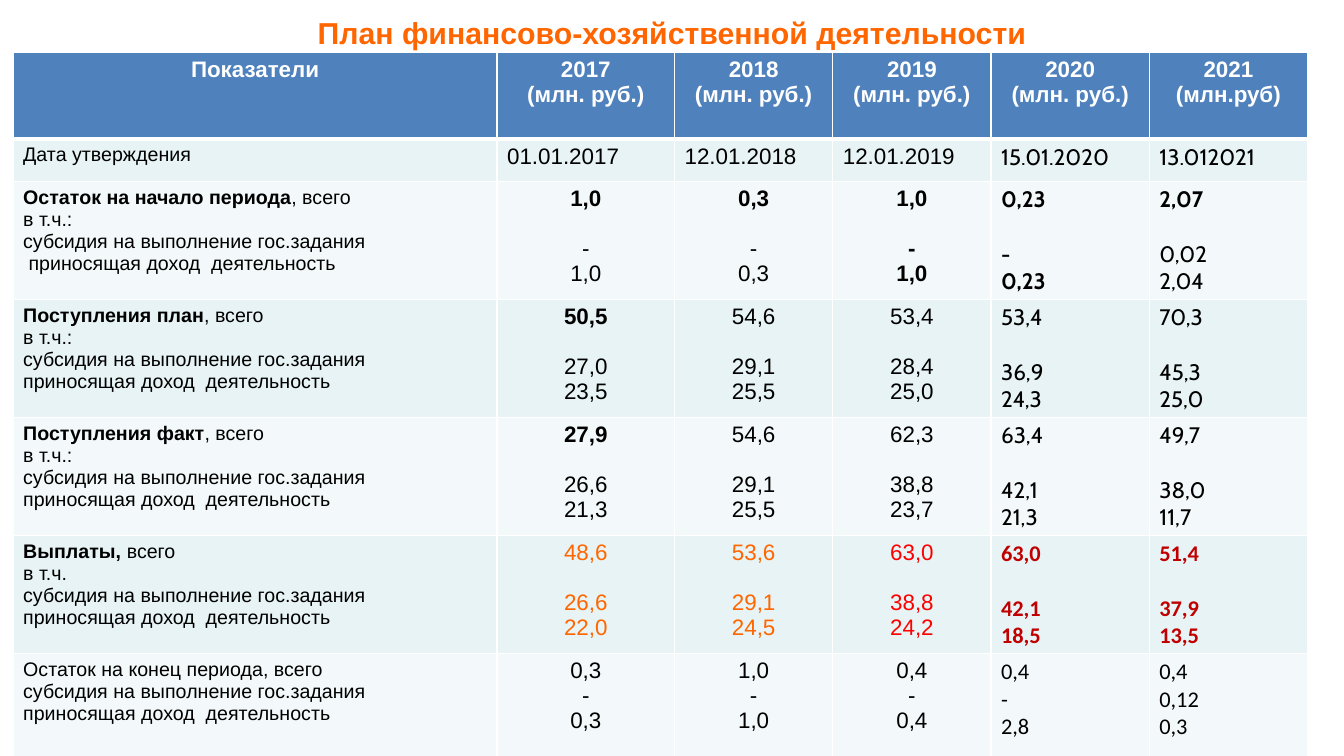
import lxml.etree
import pptx
import pptx.dml.color
import pptx.enum.text
import pptx.oxml.ns
import pptx.util

PX = 9144  # EMU per px, 100 px to the inch
ALIGN = pptx.enum.text.PP_ALIGN


class Theme:
    ARIAL, CABIN, CALIBRI = "Arial", "Cabin", "Calibri"
    TITLE_SIZE, LABEL_SIZE, VALUE_SIZE = 21.6, 14, 16
    BLANK_LINE = {ARIAL: 18, CABIN: 19.5, CALIBRI: 19.5}  # points
    ORANGE, RED, DARK_RED = "FF6600", "FF0000", "C00000"
    BLACK, WHITE, HEADER = "000000", "FFFFFF", "4F81BD"
    BANDS = ("E7F3F4", "F3F9FA")


COLUMN_WIDTHS = [480, 176, 157, 157, 157, 157]
ROW_HEIGHTS = [86, 42] + [111] * 5
TABLE_WIDTH, TABLE_HEIGHT = sum(COLUMN_WIDTHS), sum(ROW_HEIGHTS)

HEADINGS = [["Показатели"]] + [
    [year, unit] for year, unit in (
        ("2017", "(млн. руб.)"), ("2018", "(млн. руб.)"), ("2019", "(млн. руб.)"),
        ("2020", "(млн. руб.)"), ("2021", "(млн.руб)"))]
SUBSIDY = "субсидия на выполнение гос.задания"
INCOME = "приносящая доход  деятельность"

PLAIN = [Theme.BLACK] * 5
PAYOUT = [Theme.ORANGE] * 2 + [Theme.RED] + [Theme.DARK_RED] * 2
WITH_CABIN = [Theme.ARIAL] * 3 + [Theme.CABIN] * 2
WITH_CALIBRI = [Theme.ARIAL] * 3 + [Theme.CALIBRI] * 2

# Label lines, values by year, fonts, colours; text before "|" is bold
ROWS = [
    (["Дата утверждения"],
     ["01.01.2017", "12.01.2018", "12.01.2019", "15.01.2020", "13.012021"],
     WITH_CABIN, PLAIN),
    (["Остаток на начало периода|, всего", "в т.ч.:", SUBSIDY, " " + INCOME],
     ["1,0| - 1,0", "0,3| - 0,3", "1,0| -| 1,0|", "0,23| -| 0,23|", "2,07| 0,02 2,04"],
     WITH_CABIN, PLAIN),
    (["Поступления план|, всего", "в т.ч.:", SUBSIDY, INCOME],
     ["50,5| 27,0 23,5", "54,6 29,1 25,5", "53,4 28,4 25,0", "53,4 36,9 24,3", "70,3 45,3 25,0"],
     WITH_CABIN, PLAIN),
    (["Поступления факт|, всего", "в т.ч.:", SUBSIDY, INCOME],
     ["27,9| 26,6 21,3", "54,6 29,1 25,5", "62,3 38,8 23,7", "63,4 42,1 21,3", "49,7 38,0 11,7"],
     WITH_CABIN, PLAIN),
    (["Выплаты, |всего", "в т.ч.", SUBSIDY, INCOME],
     ["48,6 26,6 22,0", "53,6 29,1 24,5", "63,0 38,8 24,2", "63,0| 42,1| 18,5|", "51,4| 37,9| 13,5|"],
     WITH_CALIBRI, PAYOUT),
    (["Остаток на конец периода, всего", SUBSIDY, INCOME],
     ["0,3 - 0,3", "1,0 - 1,0", "0,4 - 0,4", "0,4 - 2,8", "0,4 0,12 0,3"],
     WITH_CALIBRI, PLAIN),
]


def rgb(color):
    return pptx.dml.color.RGBColor.from_string(color)


def write_lines(tf, lines, size, color, font=Theme.ARIAL, align=ALIGN.LEFT, gap=0):
    """One paragraph per line; gap is the space before the second line."""
    for i, line in enumerate(lines):
        p = tf.add_paragraph() if i else tf.paragraphs[0]
        p.alignment = align
        if i == 1 and gap:
            p.space_before = pptx.util.Pt(gap)
        p.font.name = font
        p.font.size = pptx.util.Pt(size)
        p.font.color.rgb = rgb(color)
        bold, mark, rest = line.rpartition("|")
        p.font.bold = bool(mark) and not rest
        for text in filter(None, (bold, rest)):
            r = p.add_run()
            r.text = text
            if bold and rest:
                r.font.bold = text == bold


def style_cell(cell, fill, top=1, bottom=1):
    """White borders, widths in points, then the fill."""
    tcPr = cell._tc.get_or_add_tcPr()
    for side, width in (("L", 1), ("R", 1), ("T", top), ("B", bottom)):
        ln = lxml.etree.SubElement(tcPr, pptx.oxml.ns.qn("a:ln" + side),
                                   w=str(pptx.util.Pt(width)))
        solid = lxml.etree.SubElement(ln, pptx.oxml.ns.qn("a:solidFill"))
        lxml.etree.SubElement(solid, pptx.oxml.ns.qn("a:srgbClr"), val=Theme.WHITE)
    cell.fill.solid()
    cell.fill.fore_color.rgb = rgb(fill)


def add_title(s, x, y, w, h):
    tf = s.shapes.add_textbox(x * PX, y * PX, w * PX, h * PX).text_frame
    tf.word_wrap = True
    tf.vertical_anchor = pptx.enum.text.MSO_ANCHOR.MIDDLE
    write_lines(tf, ["План финансово-хозяйственной деятельности|"],
                Theme.TITLE_SIZE, Theme.ORANGE, align=ALIGN.CENTER)


def add_plan_table(s, x, y, w, h):
    table = s.shapes.add_table(len(ROWS) + 1, len(HEADINGS),
                               x * PX, y * PX, w * PX, h * PX).table
    for column, width in zip(table.columns, COLUMN_WIDTHS):
        column.width = width * w // TABLE_WIDTH * PX
    for row, height in zip(table.rows, ROW_HEIGHTS):
        row.height = height * h // TABLE_HEIGHT * PX

    # Header
    for c, lines in enumerate(HEADINGS):
        cell = table.cell(0, c)
        style_cell(cell, Theme.HEADER, bottom=3)
        write_lines(cell.text_frame, [line + "|" for line in lines],
                    Theme.VALUE_SIZE, Theme.WHITE, align=ALIGN.CENTER)

    # Indicators
    for i, (label, values, fonts, colors) in enumerate(ROWS):
        cells = table.rows[i + 1].cells
        for cell in cells:
            style_cell(cell, Theme.BANDS[i % 2], top=1 if i else 3)
        write_lines(cells[0].text_frame, label, Theme.LABEL_SIZE, Theme.BLACK)
        for c, (value, font, color) in enumerate(zip(values, fonts, colors), 1):
            lines = value.split()
            centred = font == Theme.ARIAL and len(lines) > 1
            write_lines(cells[c].text_frame, lines, Theme.VALUE_SIZE, color, font,
                        ALIGN.CENTER if centred else ALIGN.LEFT,
                        Theme.BLANK_LINE[font] if len(label) > len(lines) else 0)


def main():
    prs = pptx.Presentation()
    prs.slide_width, prs.slide_height = 1333 * PX, 750 * PX
    s = prs.slides.add_slide(prs.slide_layouts[6])
    add_title(s, 186, 13, 961, 39)
    add_plan_table(s, 13, 52, TABLE_WIDTH, TABLE_HEIGHT)
    prs.save("out.pptx")


if __name__ == "__main__":
    main()
